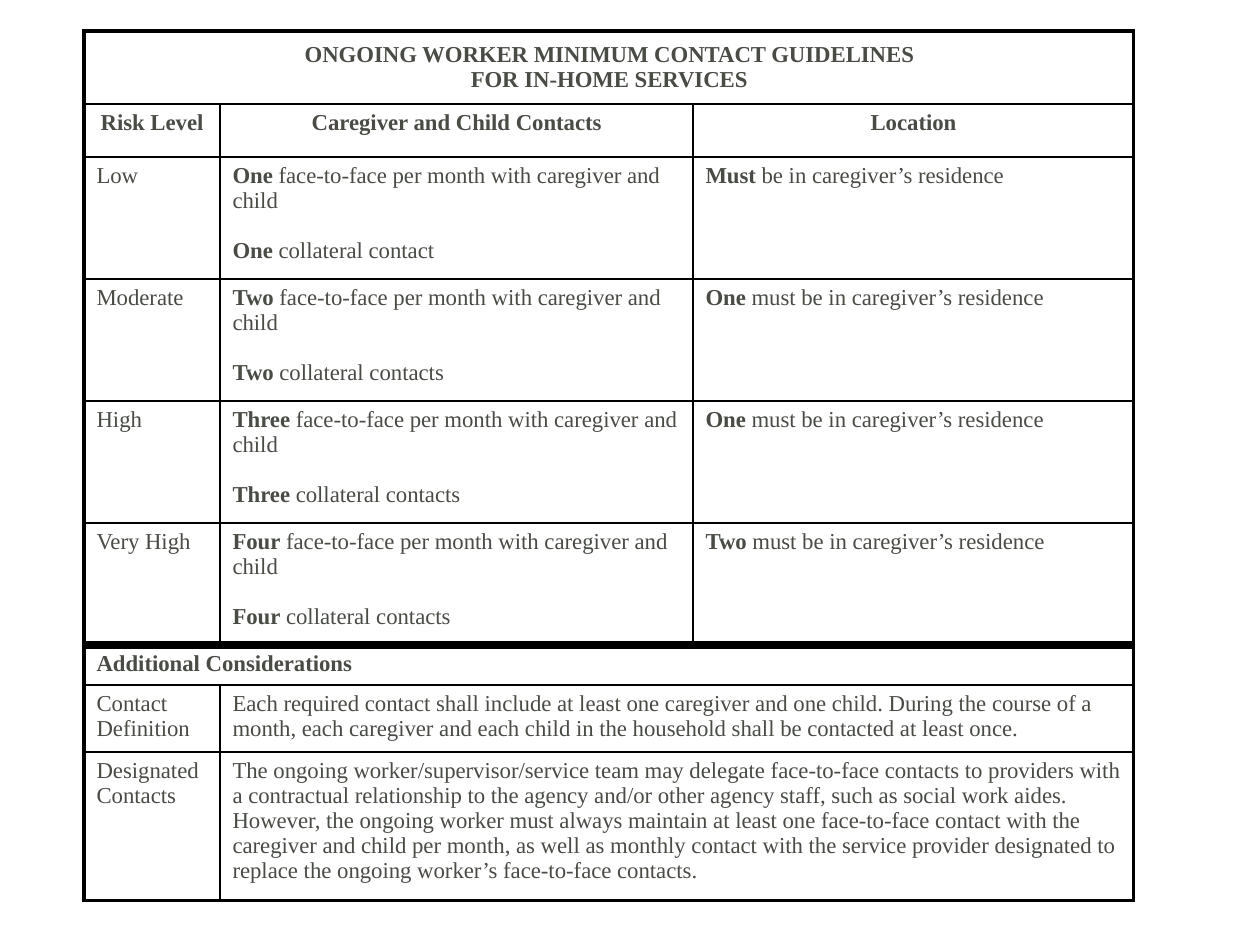
"""Build a slide with the contact guidelines table for in-home services."""
from lxml import etree
from pptx import Presentation
from pptx.dml.color import RGBColor
from pptx.enum.text import MSO_ANCHOR, PP_ALIGN
from pptx.oxml.ns import qn
from pptx.util import Pt

PX = 914400 / 126
CENTER, LEFT = PP_ALIGN.CENTER, PP_ALIGN.LEFT
MIDDLE, TOP = MSO_ANCHOR.MIDDLE, MSO_ANCHOR.TOP
INK = RGBColor(0x48, 0x4C, 0x45)
BLACK = RGBColor(0, 0, 0)
FONT = "Times New Roman"
COLUMN_WIDTHS = [136, 473, 441]
ROW_HEIGHTS = [73, 53, 122, 122, 122, 122, 40, 67, 149]
LINE_HEIGHT = 25
TITLE_ROW, HEADER_ROW, SECTION_ROW = 0, 1, 6
THIN, OUTER, DIVIDER = 1, 2, 5

LEVELS = [
    ("Low", "One", "contact", "Must", "be"),
    ("Moderate", "Two", "contacts", "One", "must be"),
    ("High", "Three", "contacts", "One", "must be"),
    ("Very High", "Four", "contacts", "Two", "must be"),
]
CONSIDERATIONS = [
    ("Contact Definition",
     "Each required contact shall include at least one caregiver and one child. "
     "During the course of a month, each caregiver and each child in the household "
     "shall be contacted at least once."),
    ("Designated Contacts",
     "The ongoing worker/supervisor/service team may delegate face-to-face contacts "
     "to providers with a contractual relationship to the agency and/or other agency "
     "staff, such as social work aides. However, the ongoing worker must always "
     "maintain at least one face-to-face contact with the caregiver and child per "
     "month, as well as monthly contact with the service provider designated to "
     "replace the ongoing worker’s face-to-face contacts."),
]


def px(length):
    return round(length * PX)


def add_border(properties, position, side, points):
    line = etree.Element(qn("a:ln" + side), w=str(Pt(points)))
    fill = etree.SubElement(line, qn("a:solidFill"))
    etree.SubElement(fill, qn("a:srgbClr"), val=str(BLACK))
    properties.insert(position, line)


rows = [
    [[("ONGOING WORKER MINIMUM CONTACT GUIDELINES", ""), ("FOR IN-HOME SERVICES", "")]],
    [[(heading, "")] for heading in
     ("Risk Level", "Caregiver and Child Contacts", "Location")],
]
for level, count, noun, visits, verb in LEVELS:
    rows.append([
        [("", level)],
        [(count, " face-to-face per month with caregiver and child"),
         (count, f" collateral {noun}")],
        [(visits, f" {verb} in caregiver’s residence")],
    ])
rows.append([[("Additional Considerations", "")]])
rows += [[[("", topic)], [("", rule)]] for topic, rule in CONSIDERATIONS]

presentation = Presentation()
presentation.slide_width = px(1260)
presentation.slide_height = px(945)
slide = presentation.slides.add_slide(presentation.slide_layouts[6])
frame = slide.shapes.add_table(
    len(ROW_HEIGHTS), len(COLUMN_WIDTHS), px(84), px(31),
    px(sum(COLUMN_WIDTHS)), px(sum(ROW_HEIGHTS)))
table = frame.table
table.first_row = False
table.horz_banding = False
for column, width in zip(table.columns, COLUMN_WIDTHS):
    column.width = px(width)
for row, height in zip(table.rows, ROW_HEIGHTS):
    row.height = px(height)

last_row, last_column = len(ROW_HEIGHTS) - 1, len(COLUMN_WIDTHS) - 1
for row_index, contents in enumerate(rows):
    for column_index, lines in enumerate(contents):
        cell = table.cell(row_index, column_index)
        right_index = column_index
        if column_index == len(contents) - 1:
            right_index = last_column
        if right_index > column_index:
            cell.merge(table.cell(row_index, right_index))
        cell.fill.background()
        cell.vertical_anchor = MIDDLE if row_index == TITLE_ROW else TOP

        for line_index, (bold_text, plain_text) in enumerate(lines):
            text_frame = cell.text_frame
            paragraph = text_frame.add_paragraph() if line_index else text_frame.paragraphs[0]
            paragraph.alignment = CENTER if row_index <= HEADER_ROW else LEFT
            if line_index and row_index != TITLE_ROW:
                paragraph.space_before = px(LINE_HEIGHT)
            paragraph.font.name = FONT
            paragraph.font.size = Pt(13)
            paragraph.font.color.rgb = INK
            for text, bold in ((bold_text, True), (plain_text, False)):
                if text:
                    run = paragraph.add_run()
                    run.text = text
                    run.font.bold = bold

        borders = {
            "L": OUTER if column_index == 0 else THIN,
            "R": OUTER if right_index == last_column else THIN,
            "T": {0: OUTER, SECTION_ROW: DIVIDER}.get(row_index, THIN),
            "B": {last_row: OUTER, SECTION_ROW - 1: DIVIDER}.get(row_index, THIN),
        }
        properties = cell._tc.get_or_add_tcPr()
        for position, (side, points) in enumerate(borders.items()):
            add_border(properties, position, side, points)

presentation.save("out.pptx")
